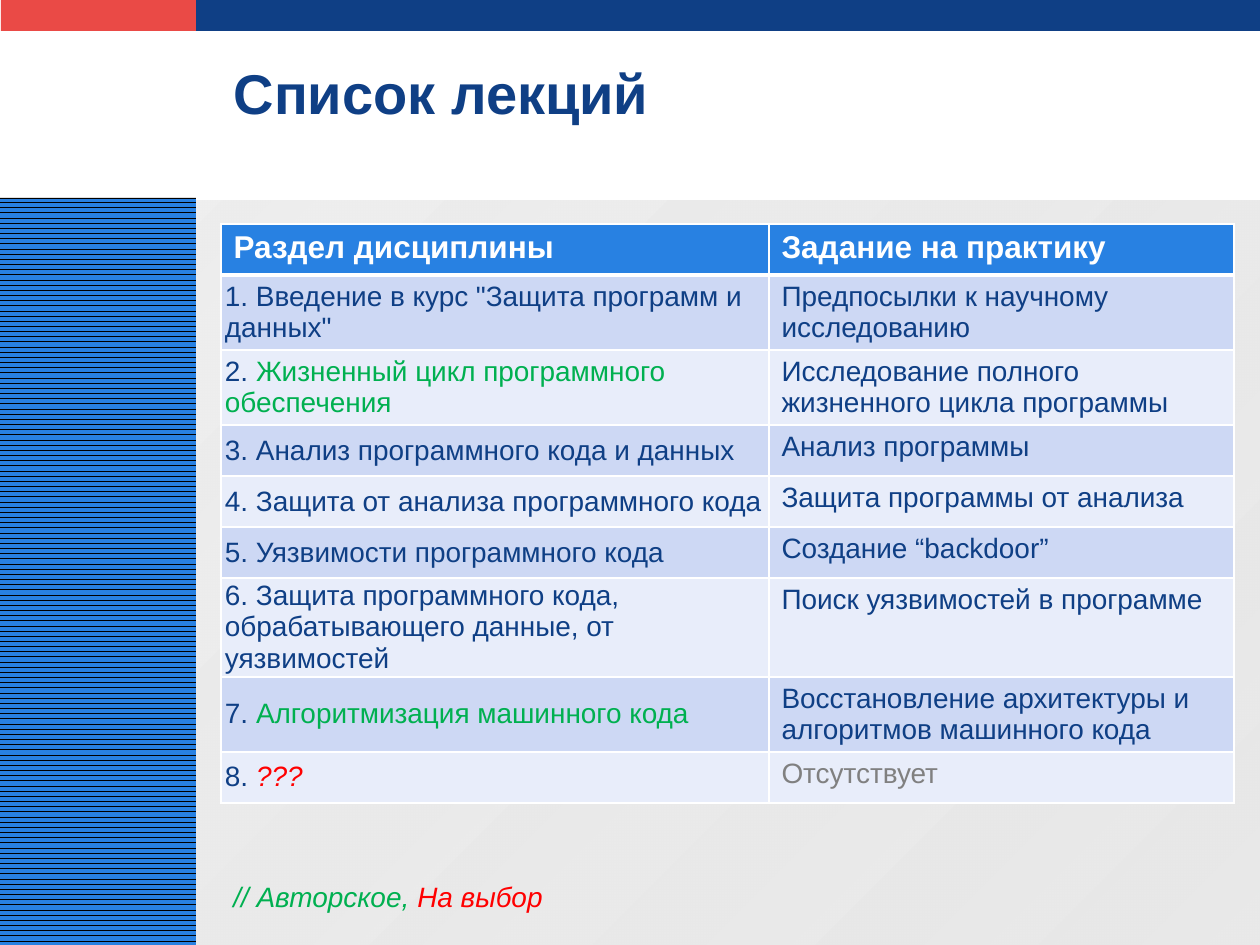
from lxml.etree import SubElement
from pptx import Presentation
from pptx.dml.color import RGBColor
from pptx.enum.dml import MSO_PATTERN
from pptx.enum.shapes import MSO_SHAPE
from pptx.enum.text import MSO_ANCHOR, PP_ALIGN
from pptx.oxml import parse_xml
from pptx.oxml.ns import nsdecls, qn
from pptx.util import Pt

PX = 914400 // 126  # EMU in one px
FONT = "Arial"
COLORS = {
    "navy": "0F3F85", "blue": "2881E2", "red": "EA4A46", "black": "000000",
    "white": "FFFFFF", "band_dark": "CDD8F4", "band_light": "E8EDFA",
    "green": "00B050", "choice": "FF0000", "gray": "808080",
    "back_start": "EFEFEF", "back_end": "DDDDDD",
}

# Content: each text is a list of (words, colour) runs
TITLE = [("Список лекций", "navy")]
HEADER = [[("Раздел дисциплины", "white")], [("Задание на практику", "white")]]
LECTURES = [
    ([("1. Введение в курс \"Защита программ и данных\"", "navy")],
     [("Предпосылки к научному исследованию", "navy")]),
    ([("2. ", "navy"), ("Жизненный цикл программного обеспечения", "green")],
     [("Исследование полного жизненного цикла программы", "navy")]),
    ([("3. Анализ программного кода и данных", "navy")],
     [("Анализ программы", "navy")]),
    ([("4. Защита от анализа программного кода", "navy")],
     [("Защита программы от анализа", "navy")]),
    ([("5. Уязвимости программного кода", "navy")],
     [("Создание “backdoor”", "navy")]),
    ([("6. Защита программного кода, обрабатывающего данные, от уязвимостей", "navy")],
     [("Поиск уязвимостей в программе", "navy")]),
    ([("7. ", "navy"), ("Алгоритмизация машинного кода", "green")],
     [("Восстановление архитектуры и алгоритмов машинного кода", "navy")]),
    ([("8. ", "navy"), ("???", "choice")],
     [("Отсутствует", "gray")]),
]
LEGEND = [("// Авторское, ", "green"), ("На выбор", "choice")]
COL_WIDTHS = [548, 465]
ROW_HEIGHTS = [51, 75, 75, 51, 51, 51, 99, 75, 51]


def rgb(name):
    return RGBColor.from_string(COLORS[name])


def box(*px):
    return [v * PX for v in px]


def write(tf, runs, size, bold=False, italic=False):
    p = tf.paragraphs[0]
    p.alignment = PP_ALIGN.LEFT
    p.font.name, p.font.size = FONT, Pt(size)
    p.font.bold, p.font.italic = bold, italic
    for text, color in runs:
        r = p.add_run()
        r.text = text
        r.font.color.rgb = rgb(color)
        if color == "choice":
            r.font.italic = True


def add_panel(slide, *px):
    sp = slide.shapes.add_shape(MSO_SHAPE.RECTANGLE, *box(*px))
    sp.shadow.inherit = False
    sp.line.fill.background()
    return sp


def add_band(slide, color, *px):
    sp = add_panel(slide, *px)
    sp.fill.solid()
    sp.fill.fore_color.rgb = rgb(color)


def set_borders(cell, top, bottom):
    tc_pr = cell._tc.get_or_add_tcPr()
    for i, (side, width) in enumerate(zip("LRTB", (1, 1, top, bottom))):
        tc_pr.insert(i, parse_xml(
            f'<a:ln{side} {nsdecls("a")} w="{Pt(width)}"><a:solidFill>'
            f'<a:srgbClr val="{COLORS["white"]}"/></a:solidFill></a:ln{side}>'))


def add_background(slide):
    add_band(slide, "navy", 189, 0, 1071, 31)

    sp = add_panel(slide, 0, 201, 1260, 744)
    sp.fill.gradient()
    sp.fill.gradient_angle = 315
    for stop, color in zip(sp.fill.gradient_stops, ("back_start", "back_end")):
        stop.color.rgb = rgb(color)
    end_color = sp._element.spPr.findall(".//" + qn("a:srgbClr"))[-1]
    SubElement(end_color, qn("a:alpha"), val="64000")

    sp = add_panel(slide, 0, 198, 196, 747)
    sp.fill.patterned()
    sp.fill.pattern = MSO_PATTERN.DARK_HORIZONTAL
    sp.fill.fore_color.rgb = rgb("blue")
    sp.fill.back_color.rgb = rgb("black")

    add_band(slide, "red", 1, 0, 195, 31)


def add_lecture_table(slide):
    rows = [HEADER, *LECTURES]
    table = slide.shapes.add_table(
        len(rows), len(COL_WIDTHS),
        *box(221, 224, sum(COL_WIDTHS), sum(ROW_HEIGHTS))).table
    for col, width in zip(table.columns, COL_WIDTHS):
        col.width = width * PX
    for i, (row, height) in enumerate(zip(rows, ROW_HEIGHTS)):
        table.rows[i].height = height * PX
        is_header = i == 0
        band = "blue" if is_header else ("band_light", "band_dark")[i % 2]
        for j, runs in enumerate(row):
            cell = table.cell(i, j)
            cell.fill.solid()
            cell.fill.fore_color.rgb = rgb(band)
            set_borders(cell, 3 if i == 1 else 1, 3 if is_header else 1)
            if j == 0 and not is_header:
                cell.vertical_anchor = MSO_ANCHOR.MIDDLE
                cell.margin_left = cell.margin_right = 4 * PX
                cell.margin_top = cell.margin_bottom = 2 * PX
            write(cell.text_frame, runs, 18 if is_header else 16, bold=is_header)


def main():
    prs = Presentation()
    prs.slide_width, prs.slide_height = box(1260, 945)
    slide = prs.slides.add_slide(prs.slide_layouts[5])

    add_background(slide)

    # Title
    title = slide.shapes.title
    title.left, title.top, title.width, title.height = box(221, 59, 921, 67)
    title.text_frame.vertical_anchor = MSO_ANCHOR.MIDDLE
    write(title.text_frame, TITLE, 32, bold=True)

    add_lecture_table(slide)

    # Legend
    tf = slide.shapes.add_textbox(*box(221, 873, 339, 47)).text_frame
    tf.word_wrap = False
    write(tf, LEGEND, 16, italic=True)

    prs.save("out.pptx")


if __name__ == "__main__":
    main()
